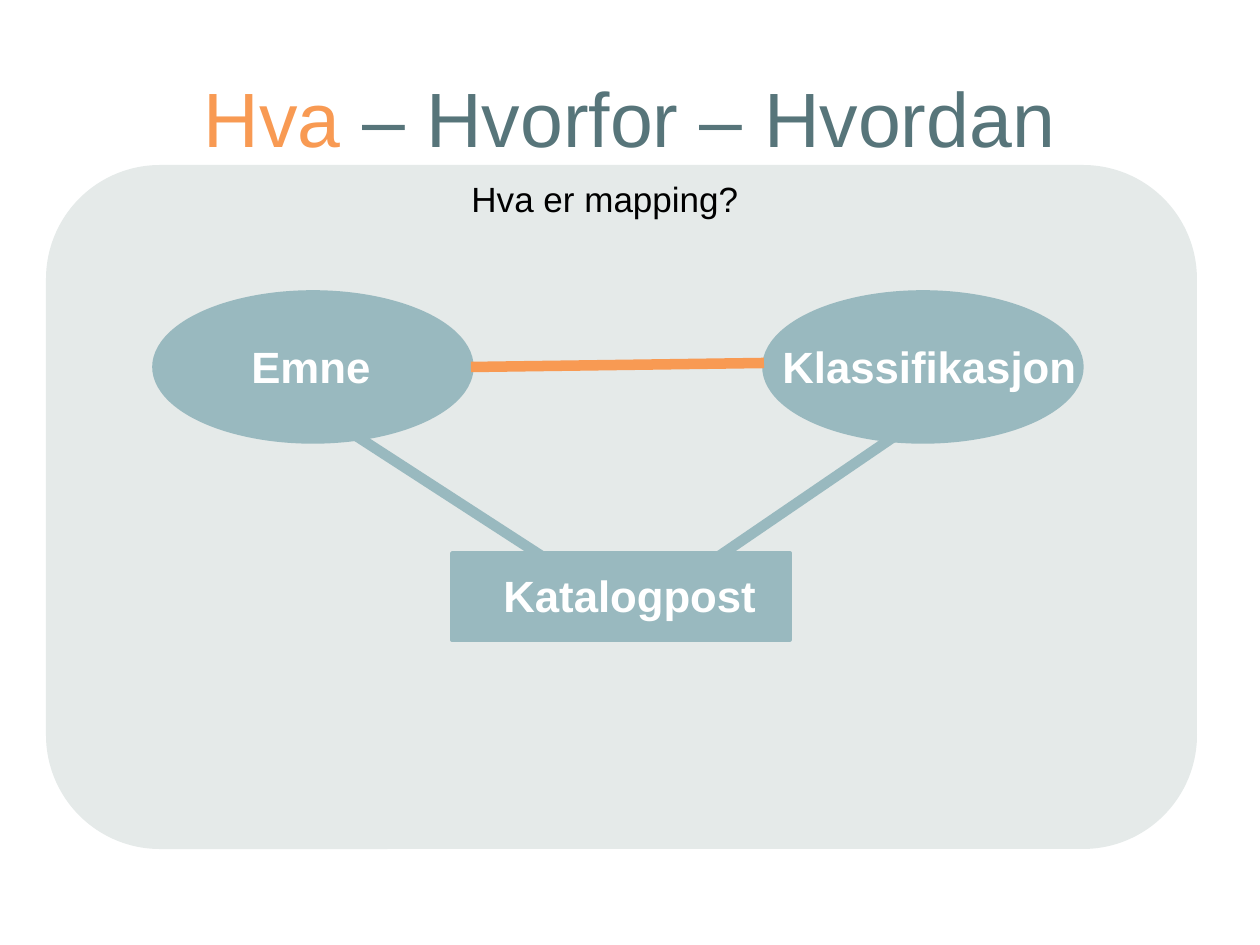
from pptx import Presentation, util as u
from pptx.dml.color import RGBColor
from pptx.enum import shapes, text
from pptx.oxml import ns
from lxml import etree

PX = u.Inches(1) / 126
TEAL = RGBColor(0x99, 0xB9, 0xBF)
SLATE = RGBColor(0x57, 0x75, 0x7A)
ORANGE = RGBColor(0xF8, 0x9A, 0x53)
PANEL = RGBColor(0xE5, 0xEA, 0xE9)
WHITE = RGBColor(0xFF, 0xFF, 0xFF)
BLACK = RGBColor(0, 0, 0)

FORMATS = {
    "title": {"name": "Arial", "size": u.Pt(44), "bold": False},
    "label": {"name": "Arial", "size": u.Pt(25), "bold": True},
    "subtitle": {"name": "Arial", "size": u.Pt(20), "bold": False},
}


def px(*lengths):
    return [round(length * PX) for length in lengths]


def write(paragraph, words, kind, color):
    run = paragraph.add_run()
    run.text = words
    for key, value in FORMATS[kind].items():
        setattr(run.font, key, value)
    run.font.color.rgb = color


def fill_placeholder(placeholder, box, kind, parts, anchor):
    placeholder.left, placeholder.top, placeholder.width, placeholder.height = px(*box)
    frame = placeholder.text_frame
    settings = {"vertical_anchor": anchor, "auto_size": text.MSO_AUTO_SIZE.NONE, "word_wrap": True}
    for key, value in settings.items():
        setattr(frame, key, value)
    paragraph = frame.paragraphs[0]
    paragraph.alignment = text.PP_ALIGN.CENTER
    paragraph.space_before = u.Pt(0)
    for words, color in parts:
        write(paragraph, words, kind, color)
    return paragraph


def remove_bullet(paragraph):
    properties = paragraph._p.get_or_add_pPr()
    for key in ("marL", "indent"):
        properties.set(key, "0")
    etree.SubElement(properties, ns.qn("a:buNone"))


def add_block(slide, preset, box, color, outlined=True):
    block = slide.shapes.add_shape(preset, *px(*box))
    block.shadow.inherit = False
    block.fill.solid()
    block.fill.fore_color.rgb = color
    if outlined:
        block.line.color.rgb = color
        block.line.width = u.Pt(2)
    else:
        block.line.fill.background()
    return block


def add_label(slide, box, words):
    frame = slide.shapes.add_textbox(*px(*box)).text_frame
    frame.word_wrap = True
    frame.auto_size = text.MSO_AUTO_SIZE.SHAPE_TO_FIT_TEXT
    write(frame.paragraphs[0], words, "label", WHITE)


def add_link(slide, ends, color):
    link = slide.shapes.add_connector(shapes.MSO_CONNECTOR.STRAIGHT, *px(*ends))
    link.line.color.rgb = color
    link.line.width = u.Pt(6)
    etree.SubElement(link._element.spPr, ns.qn("a:effectLst"))


def main():
    deck = Presentation()
    deck.slide_width, deck.slide_height = px(1260, 945)
    slide = deck.slides.add_slide(deck.slide_layouts[1])
    preset = shapes.MSO_SHAPE

    panel = add_block(slide, preset.ROUNDED_RECTANGLE, (46, 165, 1151, 684), PANEL, False)
    slide.shapes._spTree.insert(2, panel._element)

    fill_placeholder(slide.shapes.title, (63, 38, 1134, 158), "title",
                     [("Hva", ORANGE), (" – Hvorfor – Hvordan", SLATE)], text.MSO_ANCHOR.MIDDLE)
    question = fill_placeholder(slide.placeholders[1], (203, 171, 804, 74), "subtitle",
                                [("Hva er mapping?", BLACK)], text.MSO_ANCHOR.TOP)
    remove_bullet(question)

    add_block(slide, preset.RECTANGLE, (452, 553, 338, 87), TEAL)
    for left in (154, 764):
        add_block(slide, preset.OVAL, (left, 292, 318, 150), TEAL)

    for ends, color in (
        ((347, 430, 554, 564), TEAL),
        ((895, 436, 709, 563), TEAL),
        ((471, 367, 764, 363), ORANGE),
    ):
        add_link(slide, ends, color)

    for box, words in (
        ((239, 334, 179, 66), "Emne"),
        ((491, 563, 307, 66), "Katalogpost"),
        ((770, 334, 333, 66), "Klassifikasjon"),
    ):
        add_label(slide, box, words)

    deck.save("out.pptx")


if __name__ == "__main__":
    main()
